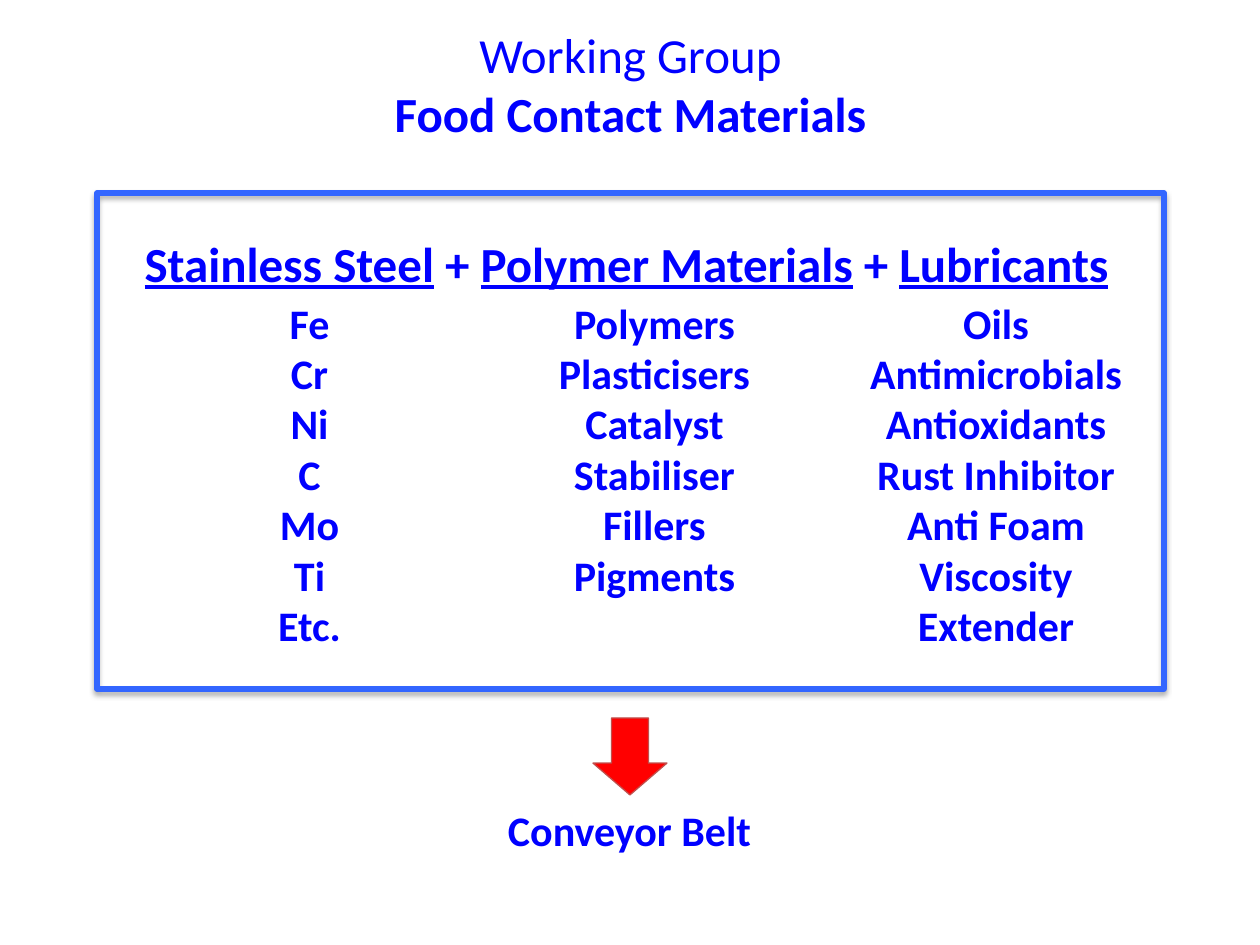
"""Build the Food Contact Materials slide."""
from lxml.etree import SubElement
from pptx import Presentation
from pptx.dml.color import RGBColor
from pptx.enum.shapes import MSO_SHAPE as Shape
from pptx.enum.text import PP_ALIGN as Align
from pptx.oxml.ns import qn
from pptx.util import Emu, Pt

BLUE = RGBColor(0x00, 0x00, 0xFF)
FRAME_BLUE = RGBColor(0x33, 0x66, 0xFF)
RED = RGBColor(0xFF, 0x00, 0x00)
BRICK = RGBColor(0xC0, 0x50, 0x4D)
FONT = "Calibri"

COLUMNS_TOP = 291
LINE_HEIGHT = 50.4
COLUMNS = [
    (224, 171, 7, ["Fe", "Cr", "Ni", "C", "Mo", "Ti", "Etc."]),
    (480, 349, 6, ["Polymers", "Plasticisers", "Catalyst", "Stabiliser",
                   "Fillers", "Pigments"]),
    (848, 296, 7, ["Oils", "Antimicrobials", "Antioxidants", "Rust Inhibitor",
                   "Anti Foam", "Viscosity Extender"]),
]


def px(value):
    return Emu(round(value * 914400 / 126))


def box(left, top, width, height):
    return [px(value) for value in (left, top, width, height)]


def add_text(shapes, bounds, paragraphs, size):
    """Add centred paragraphs, each a list of (text, bold, underline) runs."""
    frame = shapes.add_textbox(*box(*bounds)).text_frame
    frame.word_wrap = True
    for index, runs in enumerate(paragraphs):
        paragraph = frame.add_paragraph() if index else frame.paragraphs[0]
        paragraph.alignment = Align.CENTER
        for text, bold, underline in runs:
            run = paragraph.add_run()
            run.text = text
            font = run.font
            font.name, font.size, font.bold = FONT, Pt(size), bold
            font.underline = underline
            font.color.rgb = BLUE


def add_outlined(shapes, kind, bounds, line, width):
    shape = shapes.add_shape(kind, *box(*bounds))
    shape.shadow.inherit = False
    shape.fill.background()
    shape.line.color.rgb = line
    shape.line.width = Pt(width)
    return shape


def add_drop_shadow(shape):
    effects = shape._element.spPr.find(qn("a:effectLst"))
    shadow = SubElement(effects, qn("a:outerShdw"), blurRad=str(Pt(3.1)),
                        dist=str(Pt(1.8)), dir="5400000", rotWithShape="0")
    color = SubElement(shadow, qn("a:srgbClr"), val="000000")
    SubElement(color, qn("a:alpha"), val="35000")


def add_arrow(shapes):
    arrow = add_outlined(shapes, Shape.DOWN_ARROW, (593, 718, 74, 77), BRICK, 0.75)
    arrow.adjustments[0] = 0.5
    arrow.adjustments[1] = 0.43
    arrow.fill.solid()
    arrow.fill.fore_color.rgb = RED


def add_materials(shapes):
    frame = add_outlined(shapes, Shape.RECTANGLE, (97, 193, 1067, 496), FRAME_BLUE, 3)
    add_drop_shadow(frame)
    heading = [("Stainless Steel", True, True), (" + ", True, False),
               ("Polymer Materials", True, True), (" + ", True, False),
               ("Lubricants", True, True)]
    add_text(shapes, (83, 227, 1087, 72), [heading], 28)
    for left, width, lines, items in COLUMNS:
        bounds = (left, COLUMNS_TOP, width, lines * LINE_HEIGHT + 13)
        add_text(shapes, bounds, [[(item, True, False)] for item in items], 24)


def main():
    presentation = Presentation()
    presentation.slide_width, presentation.slide_height = px(1260), px(945)
    slide = presentation.slides.add_slide(presentation.slide_layouts[6])
    shapes = slide.shapes
    add_text(shapes, (78, 798, 1103, 63), [[("Conveyor Belt", True, False)]], 24)
    add_arrow(shapes)
    title = [[("Working Group", False, False)],
             [("Food Contact Materials", True, False)]]
    add_text(shapes, (184, 18, 893, 131), title, 28)
    add_materials(shapes.add_group_shape().shapes)
    presentation.save("out.pptx")


if __name__ == "__main__":
    main()
